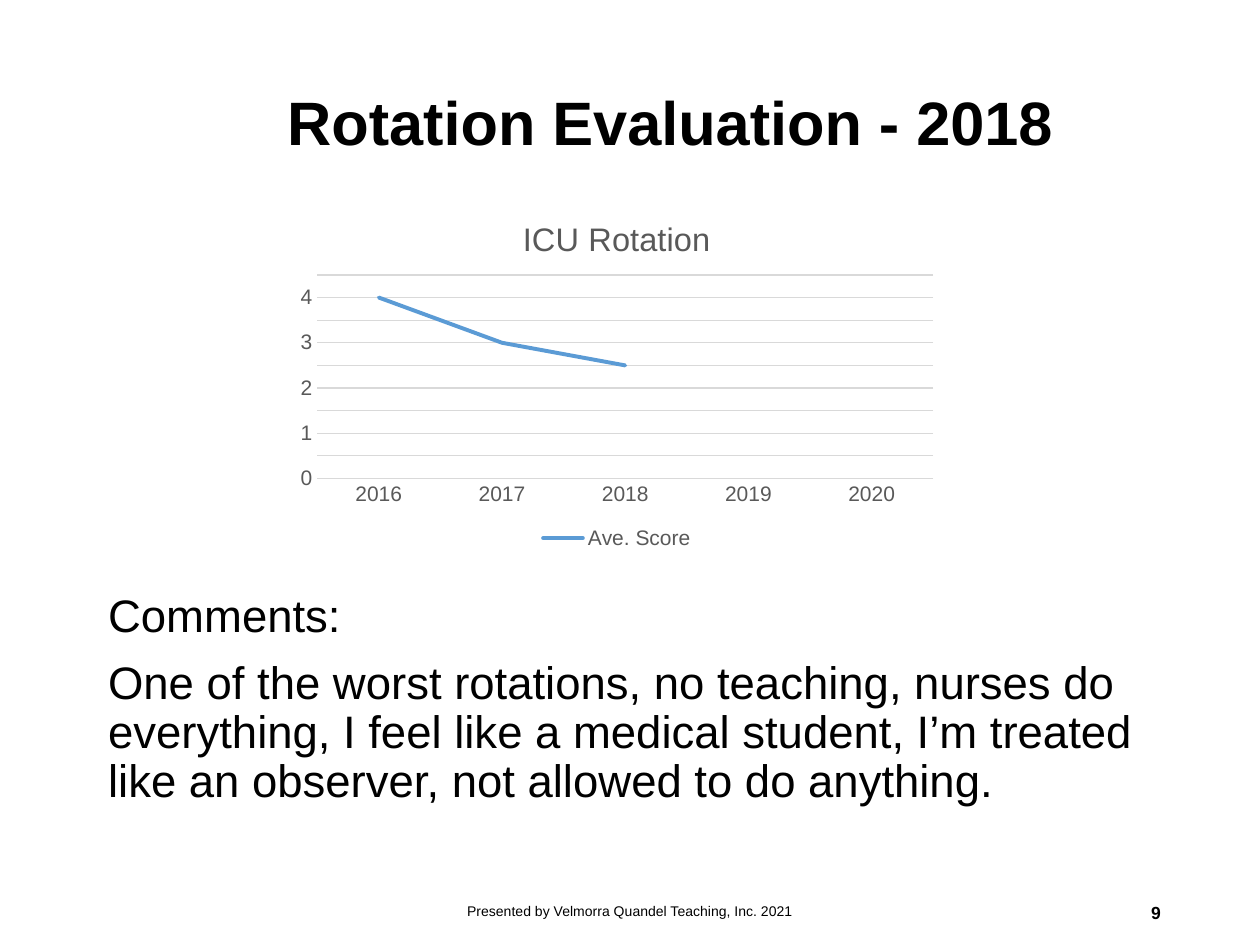
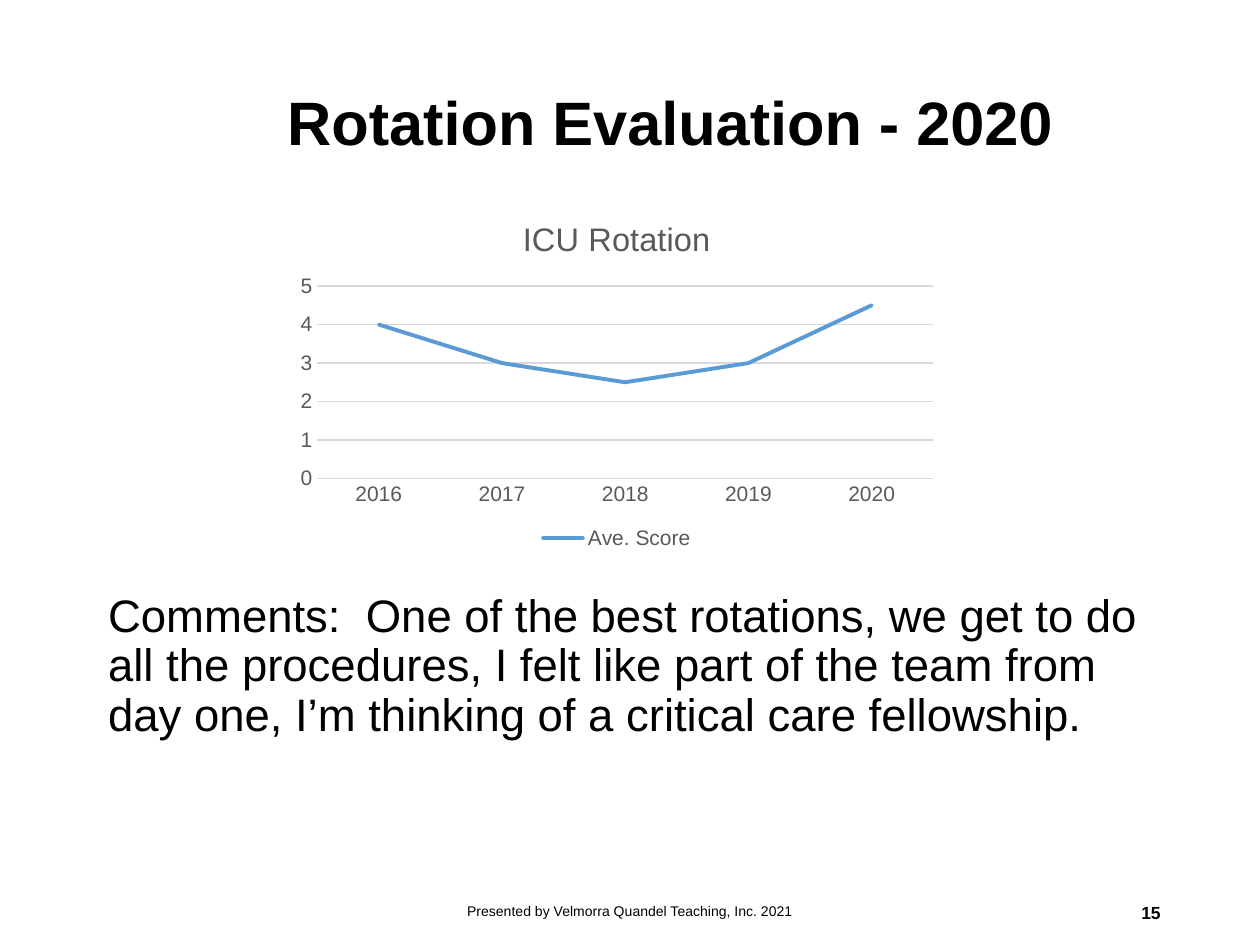
"""Build the two ICU rotation evaluation slides."""
from dataclasses import dataclass

from pptx import Presentation
from pptx.chart.data import CategoryChartData
from pptx.dml.color import RGBColor
from pptx.enum.chart import XL_CHART_TYPE, XL_LEGEND_POSITION, XL_MARKER_STYLE, XL_TICK_MARK
from pptx.enum.text import MSO_ANCHOR, PP_ALIGN
from pptx.util import Pt


@dataclass(frozen=True)
class Theme:
    font: str = "Arial"
    ink: RGBColor = RGBColor(0x00, 0x00, 0x00)
    label: RGBColor = RGBColor(0x59, 0x59, 0x59)
    grid: RGBColor = RGBColor(0xD9, 0xD9, 0xD9)
    score: RGBColor = RGBColor(0x5B, 0x9B, 0xD5)
    title_size: float = 35
    body_size: float = 26
    chart_title_size: float = 18.6
    chart_size: float = 12
    number_size: float = 10
    footer_size: float = 8


theme = Theme()


def style_font(font, size, color, bold=False):
    font.name = theme.font
    font.size = Pt(size)
    font.bold = bold
    font.color.rgb = color


def add_text(page, area, texts, size, bold=False, align=PP_ALIGN.LEFT,
             anchor=MSO_ANCHOR.MIDDLE, inset=3.6, spacing=1.0, indent=0):
    box = page.shapes.add_textbox(*map(Pt, area))
    frame = box.text_frame
    frame.word_wrap = True
    frame.vertical_anchor = anchor
    frame.margin_top = frame.margin_bottom = Pt(inset)
    for index, text in enumerate(texts):
        para = frame.add_paragraph() if index else frame.paragraphs[0]
        para.alignment = align
        para.line_spacing = spacing
        if index:
            para.space_before = Pt(10)
        if indent:
            properties = para._p.get_or_add_pPr()
            properties.set("marL", str(Pt(indent)))
            properties.set("indent", "0")
        span = para.add_run()
        span.text = text
        style_font(span.font, size, theme.ink, bold)


years = ["2016", "2017", "2018", "2019", "2020"]
evaluations = [
    ("2018", "9", [4, 3, 2.5, None, None], [
        "Comments:",
        "One of the worst rotations, no teaching, nurses do everything, I feel like a medical "
        "student, I’m treated like an observer, not allowed to do anything."]),
    ("2020", "15", [4, 3, 2.5, 3, 4.5], [
        "Comments:  One of the best rotations, we get to do all the procedures, I felt like part "
        "of the team from day one, I’m thinking of a critical care fellowship."]),
]

deck = Presentation()
deck.slide_width, deck.slide_height = Pt(720), Pt(540)

for year, number, scores, comments in evaluations:
    page = deck.slides.add_slide(deck.slide_layouts[6])
    add_text(page, (49.7, 332, 620.6, 154), comments, theme.body_size,
             anchor=MSO_ANCHOR.TOP, inset=7.2, spacing=0.9, indent=5)
    add_text(page, (157, 19.4, 514, 104.4), [f"Rotation Evaluation - {year}"],
             theme.title_size, bold=True, inset=7.2, spacing=0.9)
    add_text(page, (508.3, 506.9, 162, 28.8), [number], theme.number_size,
             bold=True, align=PP_ALIGN.RIGHT)

    data = CategoryChartData()
    data.categories = years
    data.add_series("Ave. Score", scores)
    chart = page.shapes.add_chart(
        XL_CHART_TYPE.LINE, Pt(164.2), Pt(113), Pt(376.6), Pt(203.8), data).chart
    style_font(chart.font, theme.chart_size, theme.label)

    chart.has_title = True
    heading = chart.chart_title.text_frame.paragraphs[0].add_run()
    heading.text = "ICU Rotation"
    style_font(heading.font, theme.chart_title_size, theme.label)
    chart.chart_title.include_in_layout = False

    chart.has_legend = True
    chart.legend.position = XL_LEGEND_POSITION.BOTTOM
    chart.legend.include_in_layout = False
    style_font(chart.legend.font, theme.chart_size, theme.label)

    for axis in (chart.category_axis, chart.value_axis):
        axis.major_tick_mark = axis.minor_tick_mark = XL_TICK_MARK.NONE
        style_font(axis.tick_labels.font, theme.chart_size, theme.label)
    chart.value_axis.format.line.fill.background()
    for line in (chart.category_axis.format.line, chart.value_axis.major_gridlines.format.line):
        line.color.rgb = theme.grid
        line.width = Pt(0.75)

    chart.plots[0].vary_by_categories = False
    series = chart.plots[0].series[0]
    series.smooth = False
    series.marker.style = XL_MARKER_STYLE.NONE
    series.format.line.color.rgb = theme.score
    series.format.line.width = Pt(2.25)
    series.format.line._get_or_add_ln().set("cap", "rnd")

    add_text(page, (238.3, 506.2, 243.4, 28.8), ["Presented by Velmorra Quandel Teaching, Inc. 2021"],
             theme.footer_size, align=PP_ALIGN.CENTER)

deck.save("out.pptx")
